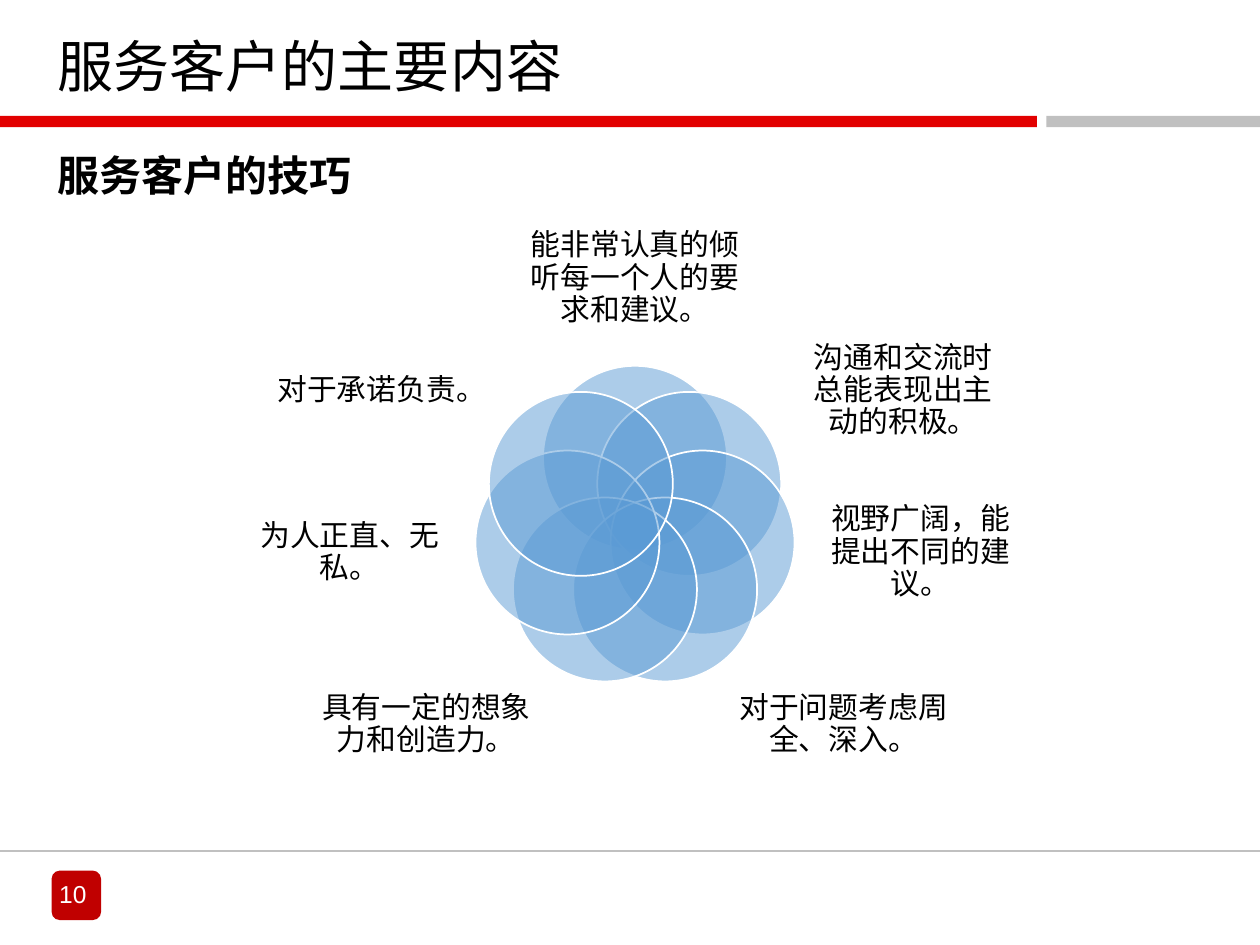
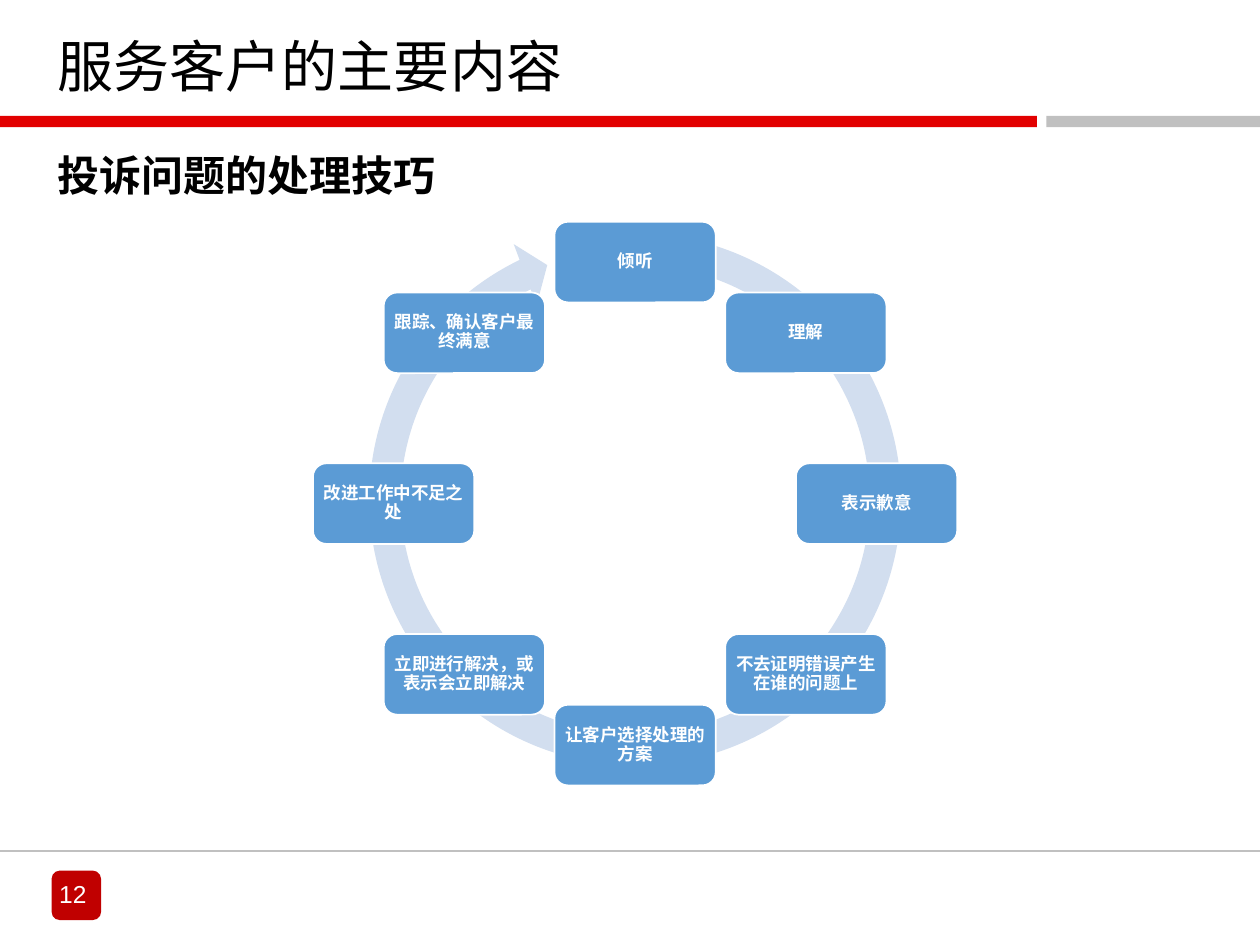
"""Build two customer service slides: a petal diagram and a handling cycle."""
from math import cos, pi, sin

from lxml.etree import SubElement
from pptx import Presentation
from pptx.dml.color import RGBColor
from pptx.enum.shapes import MSO_CONNECTOR as CONNECTOR, MSO_SHAPE as SHAPE
from pptx.enum.text import MSO_ANCHOR as ANCHOR, PP_ALIGN as ALIGN
from pptx.oxml.ns import qn
from pptx.util import Pt

BADGE_RED = RGBColor(0xC0, 0x00, 0x00)
BAND_RED = RGBColor(0xE2, 0x00, 0x00)
GREY = RGBColor(0xC0, 0xC0, 0xC0)
BLUE = RGBColor(0x5B, 0x9B, 0xD5)
PALE_BLUE = RGBColor(0xD2, 0xDE, 0xEF)
WHITE = RGBColor(0xFF, 0xFF, 0xFF)
BLACK = RGBColor(0x00, 0x00, 0x00)
CJK_FONT = "Noto Sans CJK SC"

TITLE = {
    "font": {"name": "Times New Roman", "size": Pt(32)},
    "color": BLACK,
    "paragraph": {"line_spacing": 0.9},
    "frame": {"vertical_anchor": ANCHOR.BOTTOM, "word_wrap": True},
}
SUBTITLE = {
    "font": {"name": "Times New Roman", "size": Pt(24), "bold": True},
    "color": BLACK,
    "paragraph": {"line_spacing": 0.9},
    "frame": {"vertical_anchor": ANCHOR.TOP, "word_wrap": True},
}
PAGE_NUMBER = {
    "font": {"name": "Arial", "size": Pt(14)},
    "color": WHITE,
    "paragraph": {"alignment": ALIGN.CENTER},
    "frame": {"vertical_anchor": ANCHOR.MIDDLE, "word_wrap": False,
              "margin_left": 0, "margin_right": Pt(4),
              "margin_top": 0, "margin_bottom": Pt(2)},
}
SKILL = {
    "font": {"name": "Calibri", "size": Pt(17)},
    "color": BLACK,
    "paragraph": {"alignment": ALIGN.CENTER, "line_spacing": 0.9, "space_after": Pt(6)},
    "frame": {"vertical_anchor": ANCHOR.MIDDLE, "word_wrap": True,
              "margin_left": 0, "margin_right": 0, "margin_top": 0, "margin_bottom": 0},
}
STEP = {
    "font": {"name": "Calibri", "size": Pt(10), "bold": True},
    "color": WHITE,
    "paragraph": {"alignment": ALIGN.CENTER, "line_spacing": 0.9, "space_after": Pt(3.5)},
    "frame": {"vertical_anchor": ANCHOR.MIDDLE, "word_wrap": True,
              "margin_left": Pt(2.8), "margin_right": Pt(2.8),
              "margin_top": Pt(2.8), "margin_bottom": Pt(2.8)},
}


def write(holder, text, style):
    """Put one styled paragraph into a shape or text box."""
    frame = holder.text_frame
    paragraph = frame.paragraphs[0]
    run = paragraph.add_run()
    run.text = text
    for target, values in ((frame, style["frame"]), (paragraph, style["paragraph"]),
                           (run.font, style["font"])):
        for attribute, value in values.items():
            setattr(target, attribute, value)
    run.font.color.rgb = style["color"]
    SubElement(run.font._element, qn("a:ea")).set("typeface", CJK_FONT)


def draw(slide, kind, box, fill, outline=None):
    """Add a flat preset shape; box is left, top, width, height in points."""
    shape = slide.shapes.add_shape(kind, *map(Pt, box))
    shape.shadow.inherit = False
    shape.fill.solid()
    shape.fill.fore_color.rgb = fill
    if outline is None:
        shape.line.fill.background()
    else:
        shape.line.color.rgb = outline
        shape.line.width = Pt(1)
    return shape


deck = Presentation()
deck.slide_width, deck.slide_height = Pt(720), Pt(540)

pages = []
for number, subtitle in (("10", "服务客户的技巧"), ("12", "投诉问题的处理技巧")):
    page = deck.slides.add_slide(deck.slide_layouts[6])
    badge = draw(page, SHAPE.ROUNDED_RECTANGLE, (29.5, 497.5, 28.3, 28.3), BADGE_RED)
    write(badge, number, PAGE_NUMBER)
    draw(page, SHAPE.RECTANGLE, (0, 66.2, 592.6, 6.5), BAND_RED)
    draw(page, SHAPE.RECTANGLE, (598, 66.2, 122, 6.5), GREY)
    rule = page.shapes.add_connector(CONNECTOR.STRAIGHT, 0, Pt(486.5), Pt(720), Pt(486.5))
    rule.line.color.rgb = GREY
    rule.line.width = Pt(1)
    SubElement(rule._element.spPr, qn("a:effectLst"))
    for text, style, box in (("服务客户的主要内容", TITLE, (26, 8.6, 594, 51.8)),
                             (subtitle, SUBTITLE, (26, 85, 540, 41.8))):
        write(page.shapes.add_textbox(*map(Pt, box)), text, style)
    pages.append(page)
skills_page, cycle_page = pages

CENTER_X = 362.9

FLOWER_Y, FLOWER_RADIUS, PETAL = 301.2, 39.6, 105.1
skills = [
    ("能非常认真的倾听每一个人的要求和建议。", 0, 159.1, 120.4, 64.8),
    ("沟通和交流时总能表现出主动的积极。", 153.3, 223.2, 113.8, 70.6),
    ("视野广阔，能提出不同的建议。", 163.1, 315.7, 111.6, 75.6),
    ("对于问题考虑周全、深入。", 119.2, 414, 120.4, 69.1),
    ("具有一定的想象力和创造力。", -119.2, 414, 120.4, 69.1),
    ("为人正直、无私。", -163.1, 315.7, 111.6, 75.6),
    ("对于承诺负责。", -153.3, 223.2, 113.8, 70.6),
]
for index, (skill, offset, middle, width, height) in enumerate(skills):
    angle = 2 * pi * index / len(skills)
    left = CENTER_X + FLOWER_RADIUS * sin(angle) - PETAL / 2
    top = FLOWER_Y - FLOWER_RADIUS * cos(angle) - PETAL / 2
    petal = draw(skills_page, SHAPE.OVAL, (left, top, PETAL, PETAL), BLUE, WHITE)
    tint = petal._element.spPr.find(qn("a:solidFill"))[0]
    SubElement(tint, qn("a:alpha")).set("val", "50000")
    label = skills_page.shapes.add_textbox(
        Pt(CENTER_X + offset - width / 2), Pt(middle - height / 2), Pt(width), Pt(height))
    write(label, skill, SKILL)

CYCLE_Y, CYCLE_RADIUS, STEP_WIDTH, STEP_HEIGHT = 287.8, 138, 92.2, 46.1
ring = draw(cycle_page, SHAPE.CIRCULAR_ARROW, (201.4, 123.8, 323.2, 323.2), PALE_BLUE)
for index, percent in enumerate((5.54, 330.68, 14634.8, 16882.4, 5.76)):
    ring.adjustments[index] = percent / 100

steps = ["倾听", "理解", "表示歉意", "不去证明错误产生在谁的问题上", "让客户选择处理的方案",
         "立即进行解决，或表示会立即解决", "改进工作中不足之处", "跟踪、确认客户最终满意"]
for index, step in enumerate(steps):
    angle = 2 * pi * index / len(steps)
    left = CENTER_X + CYCLE_RADIUS * sin(angle) - STEP_WIDTH / 2
    top = CYCLE_Y - CYCLE_RADIUS * cos(angle) - STEP_HEIGHT / 2
    card = draw(cycle_page, SHAPE.ROUNDED_RECTANGLE,
                (left, top, STEP_WIDTH, STEP_HEIGHT), BLUE, WHITE)
    write(card, step, STEP)

deck.save("out.pptx")
